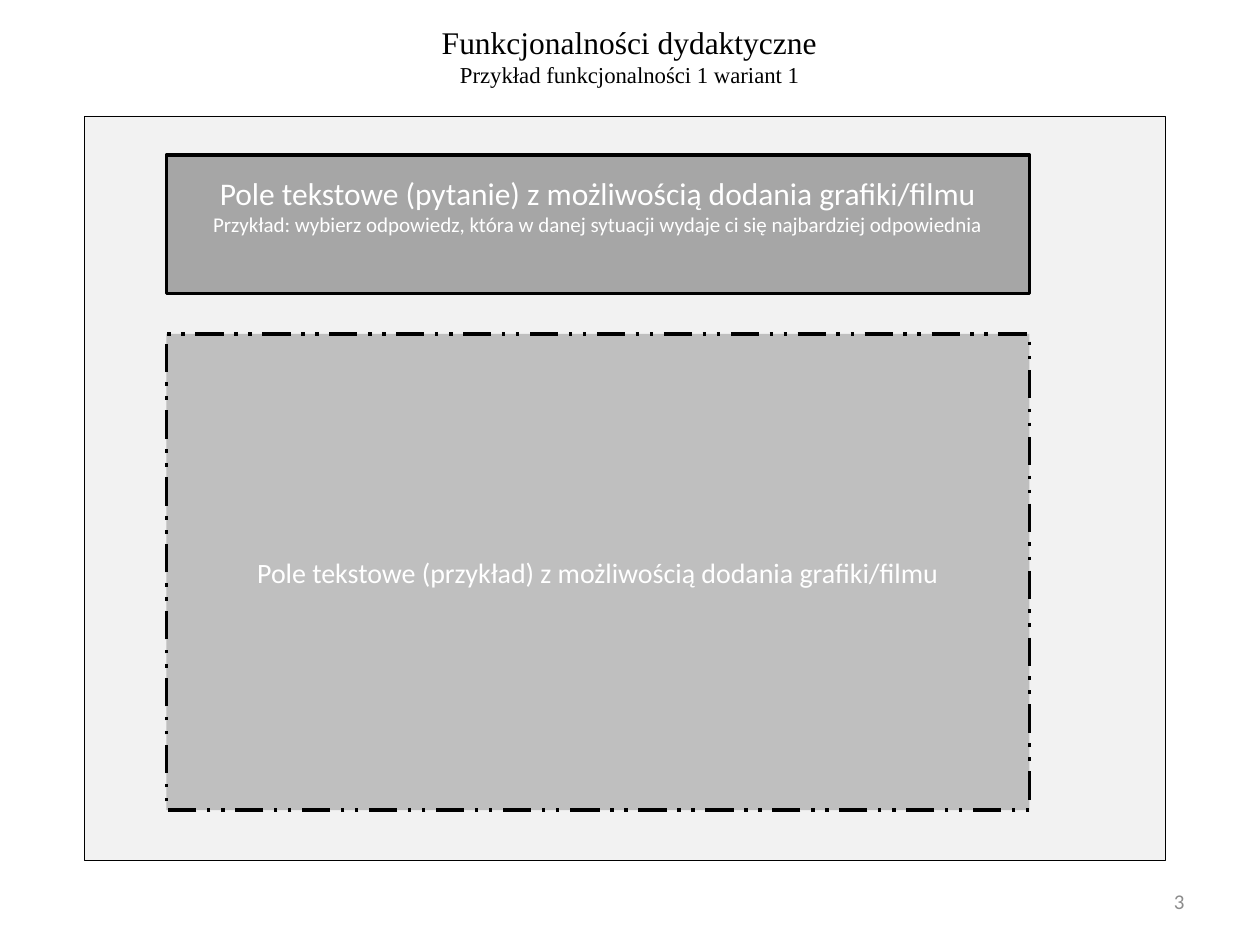
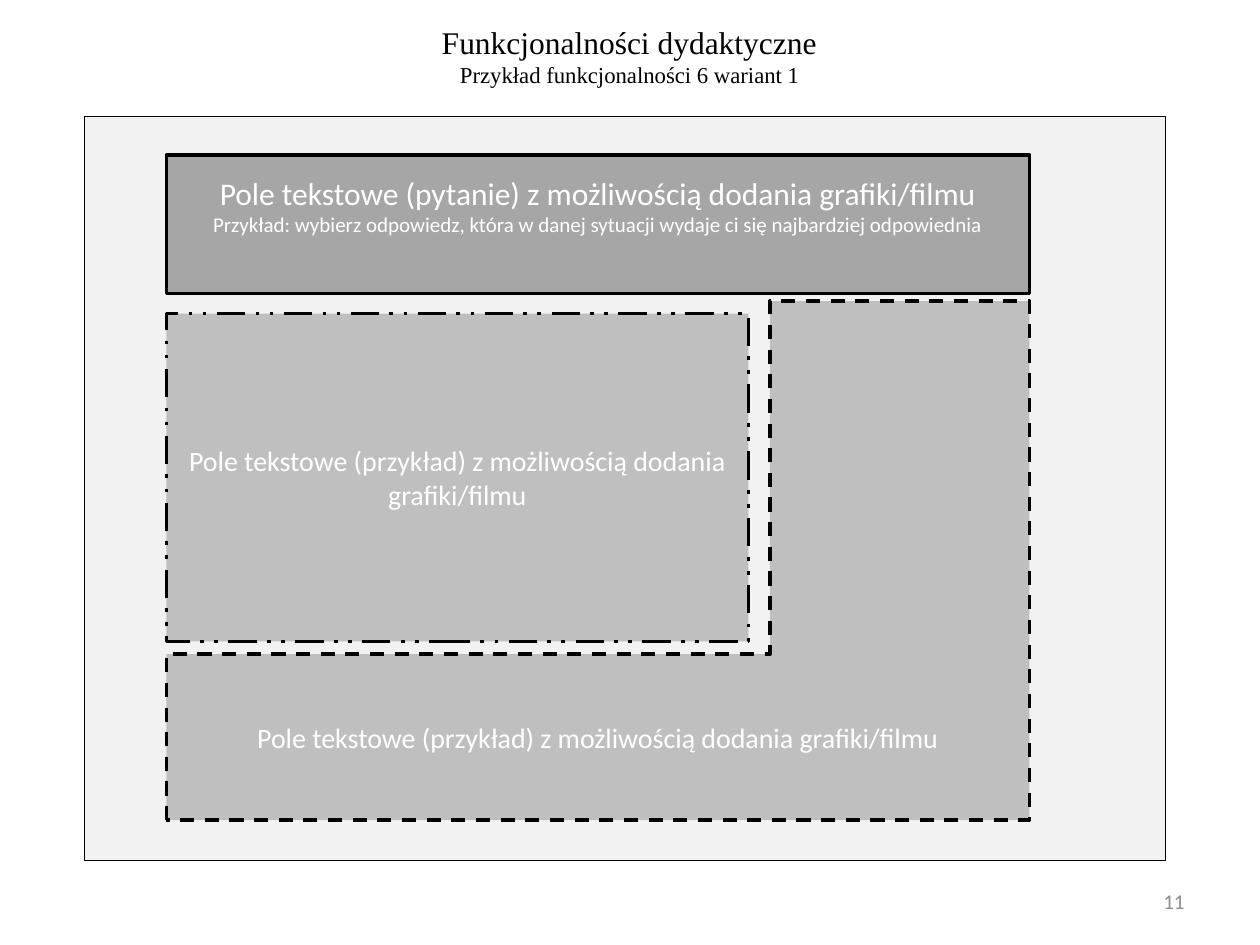
import pptx
import pptx.util
import pptx.dml.color
import pptx.enum.dml
import pptx.enum.shapes
import pptx.enum.text

Inches = pptx.util.Inches
Pt = pptx.util.Pt
Shape = pptx.enum.shapes.MSO_SHAPE
Dash = pptx.enum.dml.MSO_LINE
Align = pptx.enum.text.PP_ALIGN
Anchor = pptx.enum.text.MSO_ANCHOR

COLOURS = {
    "ink": "000000",
    "panel": "F2F2F2",
    "question": "A6A6A6",
    "example": "BFBFBF",
    "light": "FFFFFF",
    "number": "8C8C8C",
}
BODY_FONT = "Calibri"
TITLE_FONT = "Times New Roman"

TITLE_BOX = (3.39, 0.13, 3.21, 0.62)
PANEL_BOX = (0.67, 0.92, 8.58, 5.91)
NUMBER_BOX = (7.17, 6.95, 2.33, 0.4)
COLUMN_INSET = 0.65
COLUMN_WIDTH = 6.85

EXAMPLE_TEXT = "Pole tekstowe (przykład) z możliwością dodania grafiki/filmu"
QUESTION_LINES = [
    ("Pole tekstowe (pytanie) z możliwością dodania grafiki/filmu", 18),
    ("Przykład: wybierz odpowiedz, która w danej sytuacji wydaje ci się najbardziej odpowiednia", 12),
]


def colour(name):
    return pptx.dml.color.RGBColor.from_string(COLOURS[name])


def write_lines(frame, lines, ink, font=BODY_FONT, align=Align.CENTER):
    for index, (text, size) in enumerate(lines):
        para = frame.add_paragraph() if index else frame.paragraphs[0]
        para.text = text
        para.alignment = align
        para.font.name = font
        para.font.size = Pt(size)
        para.font.color.rgb = colour(ink)


def add_text(page, box, lines, ink, font=BODY_FONT, align=Align.CENTER, wrap=True, anchor=Anchor.MIDDLE):
    frame = page.shapes.add_textbox(*map(Inches, box)).text_frame
    frame.word_wrap = wrap
    frame.vertical_anchor = anchor
    write_lines(frame, lines, ink, font, align)


def add_field(page, box, fill, lines=(), line_width=2, dash=None, preset=Shape.RECTANGLE):
    field = page.shapes.add_shape(preset, *map(Inches, box))
    field.shadow.inherit = False
    field.fill.solid()
    field.fill.fore_color.rgb = colour(fill)
    field.line.color.rgb = colour("ink")
    field.line.width = Pt(line_width)
    if dash is not None:
        field.line.dash_style = dash
    field.text_frame.word_wrap = True
    field.text_frame.vertical_anchor = Anchor.MIDDLE
    write_lines(field.text_frame, lines, "light")
    return field


def add_frame(page, variant, number):
    title_lines = [("Funkcjonalności dydaktyczne", 18), (variant, 13)]
    add_text(page, TITLE_BOX, title_lines, "ink", TITLE_FONT, wrap=False, anchor=Anchor.TOP)
    add_field(page, PANEL_BOX, "panel", line_width=0.25)
    add_question(page, PANEL_BOX)
    add_text(page, NUMBER_BOX, [(str(number), 12)], "number", align=Align.RIGHT)


def add_question(page, panel):
    left, top = panel[:2]
    box = (left + COLUMN_INSET, top + 0.31, COLUMN_WIDTH, 1.1)
    question = add_field(page, box, "question", QUESTION_LINES)
    question.text_frame.margin_bottom = Inches(0.35)


def add_example(page, panel, offset, width, height):
    left, top = panel[:2]
    box = (left + COLUMN_INSET, top + offset, width, height)
    add_field(page, box, "example", [(EXAMPLE_TEXT, 16)], dash=Dash.DASH_DOT_DOT)


def add_corner_example(page, panel, offset, height):
    left, top = panel[:2]
    shift = (COLUMN_WIDTH - height) / 2
    box = (left + COLUMN_INSET + shift, top + offset - shift, height, COLUMN_WIDTH)
    corner = add_field(page, box, "example", [(EXAMPLE_TEXT, 16)],
                       dash=Dash.DASH, preset=Shape.CORNER)
    corner.rotation = 270
    corner.adjustments[0] = 0.5
    corner.adjustments[1] = 0.32
    corner.text_frame._txBody.bodyPr.set("vert", "vert")


def build_single_example(page):
    add_frame(page, "Przykład funkcjonalności 1 wariant 1", 3)
    add_example(page, PANEL_BOX, 1.73, COLUMN_WIDTH, 3.78)


def build_corner_example(page):
    add_frame(page, "Przykład funkcjonalności 6 wariant 1", 11)
    add_example(page, PANEL_BOX, 1.57, 4.62, 2.6)
    add_corner_example(page, PANEL_BOX, 1.47, 4.12)


def main():
    deck = pptx.Presentation()
    deck.slide_width = Inches(10)
    deck.slide_height = Inches(7.5)
    for build in (build_single_example, build_corner_example):
        build(deck.slides.add_slide(deck.slide_layouts[6]))
    deck.save("out.pptx")


if __name__ == "__main__":
    main()
